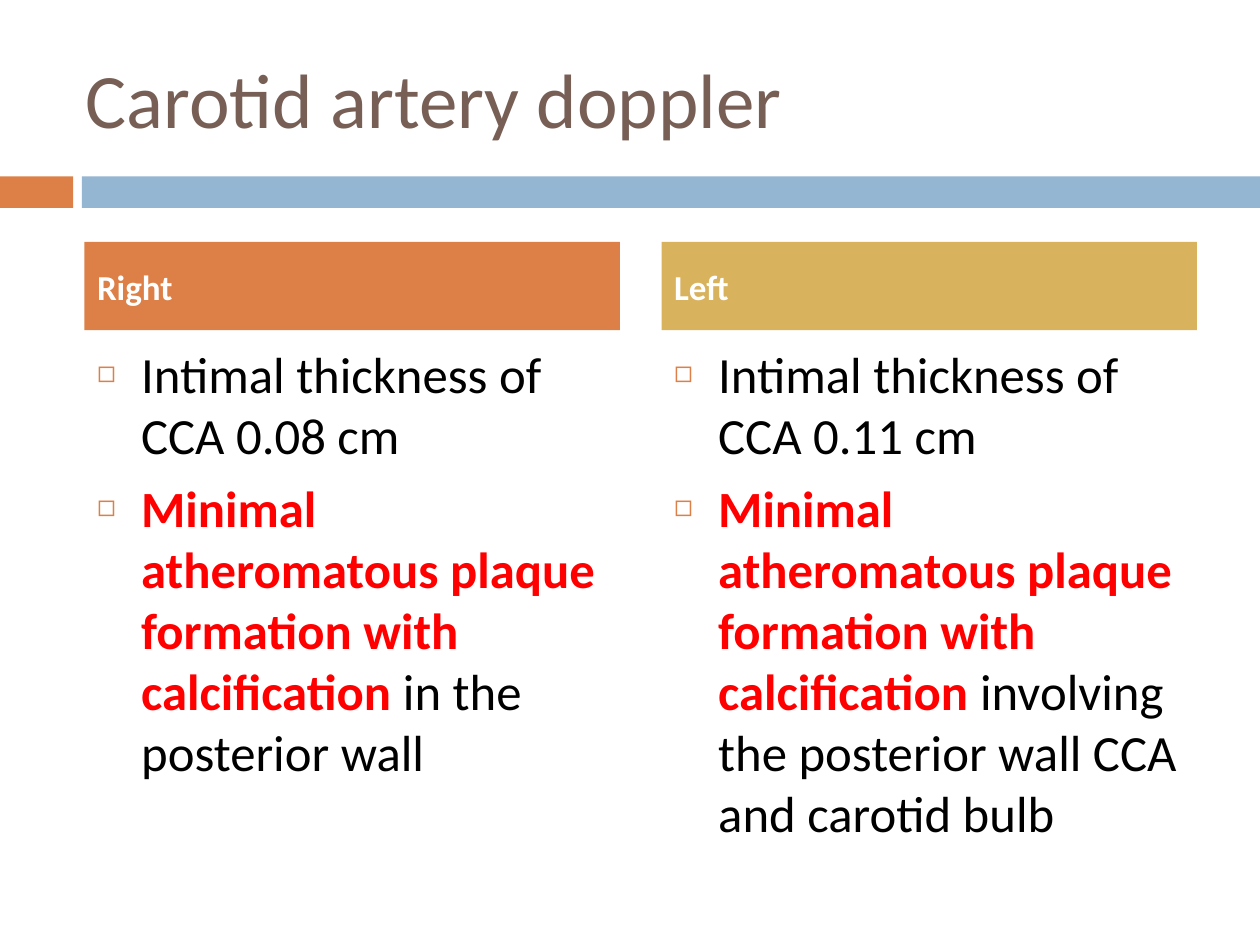
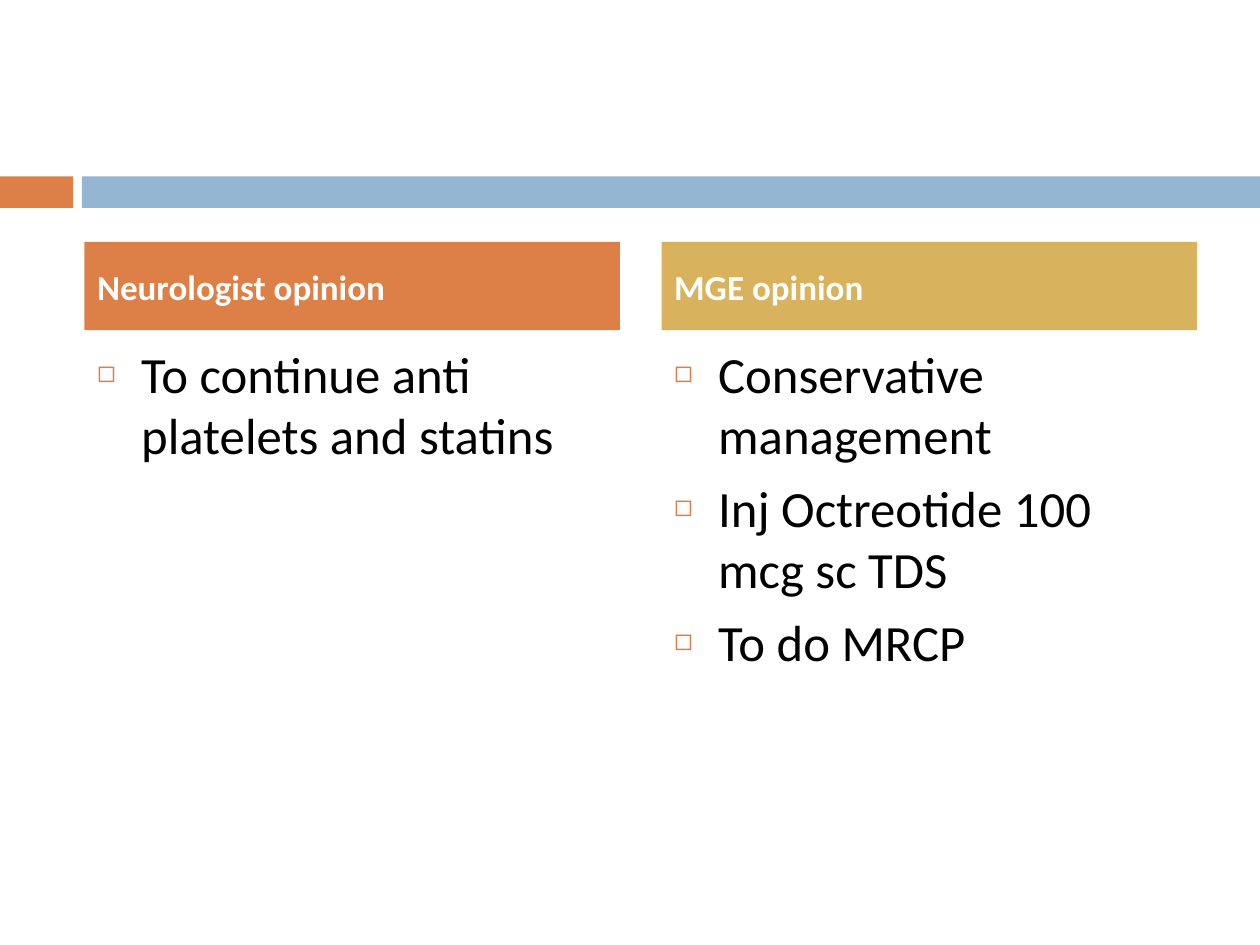
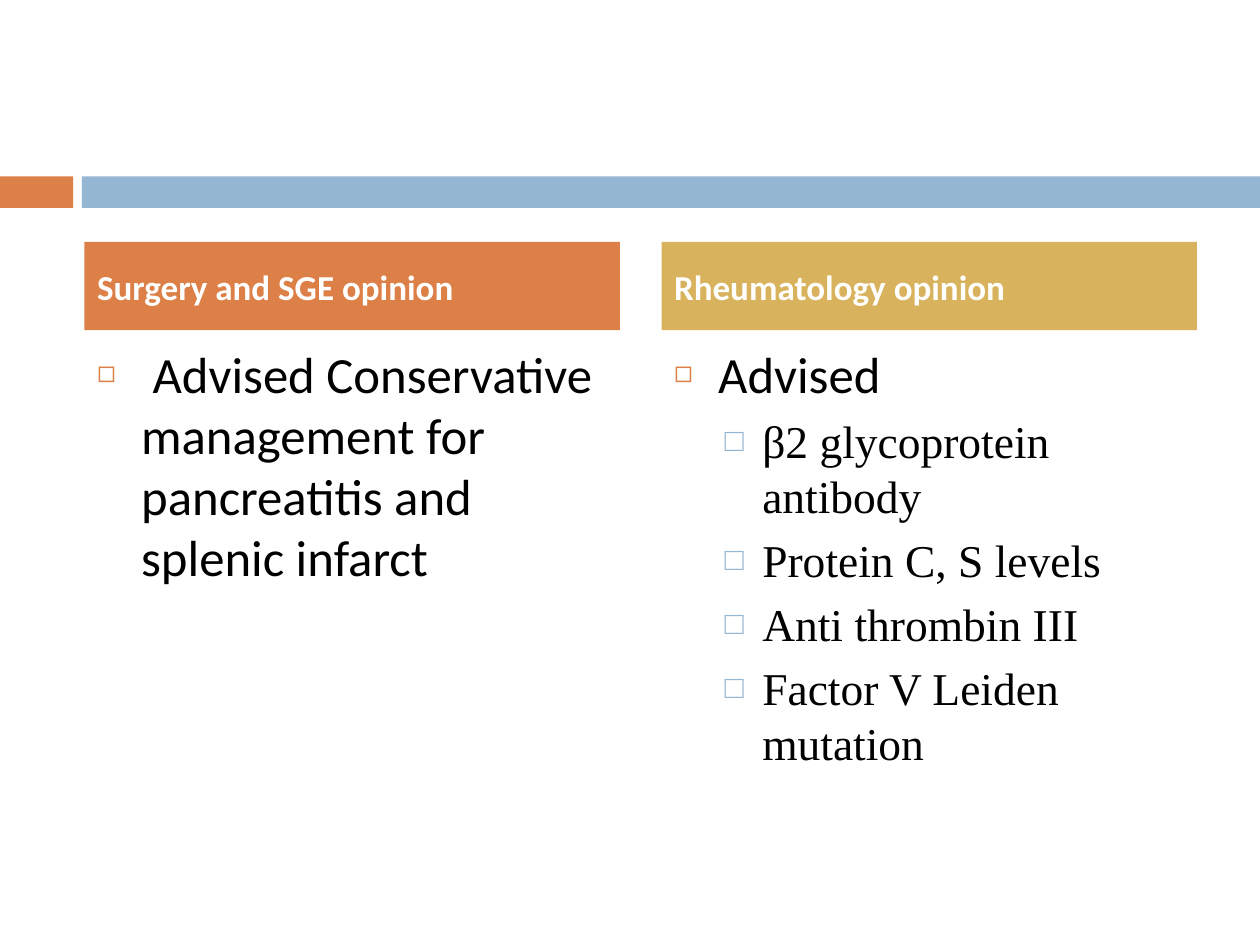
from lxml import etree
from pptx import Presentation
from pptx.dml.color import RGBColor
from pptx.enum import shapes, text
from pptx.oxml import ns
from pptx.util import Inches, Pt

ORANGE = RGBColor(0xDD, 0x80, 0x47)
BLUE = RGBColor(0x94, 0xB6, 0xD2)
GOLD = RGBColor(0xD8, 0xB2, 0x5C)
BROWN = RGBColor(0x77, 0x5F, 0x55)
RED = RGBColor(0xFF, 0x00, 0x00)
BLACK = RGBColor(0x00, 0x00, 0x00)
WHITE = RGBColor(0xFF, 0xFF, 0xFF)

COMPARISON_LAYOUT = 4
COLUMN_LEFTS = (0.67, 5.25)
COLUMN_TOP, COLUMN_WIDTH = 1.92, 4.25
HEADING_HEIGHT, LIST_OFFSET, LIST_HEIGHT = 0.7, 0.75, 3.92

# Per list level: margin, hanging indent, space before, bullet, its colour and
# percentage, text size, font
LEVELS = (
    (0.35, 0.35, 7, "◻", ORANGE, 60, 29, "Calibri"),
    (0.7, 0.3, 5.5, "□", BLUE, 70, 26, "Times New Roman"),
)

PLAQUE = "Minimal atheromatous plaque formation with calcification"

# Each list item is (level, highlighted opening, remaining text)
SLIDES = (
    ("Carotid artery doppler", (
        ("Right", ((0, "", "Intimal thickness of CCA 0.08 cm"),
                   (0, PLAQUE, " in the posterior wall"))),
        ("Left", ((0, "", "Intimal thickness of CCA 0.11 cm"),
                  (0, PLAQUE, " involving the posterior wall CCA and carotid bulb"))),
    )),
    ("", (
        ("Neurologist opinion", ((0, "", "To continue anti platelets and statins"),)),
        ("MGE opinion", ((0, "", "Conservative management"),
                         (0, "", "Inj Octreotide 100 mcg sc TDS"),
                         (0, "", "To do MRCP"))),
    )),
    ("", (
        ("Surgery and SGE opinion",
         ((0, "", " Advised Conservative management for pancreatitis and splenic infarct"),)),
        ("Rheumatology opinion", ((0, "", "Advised"),
                                  (1, "", "β2 glycoprotein antibody"),
                                  (1, "", "Protein C, S levels"),
                                  (1, "", "Anti thrombin III"),
                                  (1, "", "Factor V Leiden mutation"))),
    )),
)


def place(shape, left, top, width, height):
    shape.left, shape.top = Inches(left), Inches(top)
    shape.width, shape.height = Inches(width), Inches(height)


def set_font(paragraph, name, size, color, bold=False):
    font = paragraph.font
    font.name, font.size, font.bold = name, Pt(size), bold
    font.color.rgb = color


def set_bullet(paragraph, char, color, percent):
    properties = paragraph._p.get_or_add_pPr()

    def add(parent, tag, **attributes):
        return etree.SubElement(parent, ns.qn(tag), **attributes)

    add(add(properties, "a:buClr"), "a:srgbClr", val=str(color))
    add(properties, "a:buSzPct", val=str(percent * 1000))
    add(properties, "a:buChar", char=char)


def add_bands(slide, top=1.4, height=0.25):
    for left, width, color in ((0, 0.58, ORANGE), (0.65, 9.35, BLUE)):
        band = slide.shapes.add_shape(
            shapes.MSO_SHAPE.RECTANGLE,
            Inches(left), Inches(top), Inches(width), Inches(height))
        band.shadow.inherit = False
        band.fill.solid()
        band.fill.fore_color.rgb = color
        band.line.fill.background()


def fill_title(title, wording):
    if not wording:
        title._element.getparent().remove(title._element)
        return
    place(title, 0.58, 0.3, 8.92, 0.95)
    frame = title.text_frame
    frame.text = wording
    frame.auto_size = text.MSO_AUTO_SIZE.NONE
    frame.vertical_anchor = text.MSO_ANCHOR.MIDDLE
    paragraph = frame.paragraphs[0]
    paragraph.alignment = text.PP_ALIGN.LEFT
    set_font(paragraph, "Calibri", 44, BROWN)


def fill_heading(heading, wording, color):
    heading.fill.solid()
    heading.fill.fore_color.rgb = color
    frame = heading.text_frame
    frame.text = wording
    frame.auto_size = text.MSO_AUTO_SIZE.NONE
    frame.vertical_anchor = text.MSO_ANCHOR.MIDDLE
    paragraph = frame.paragraphs[0]
    paragraph.space_before = Pt(7)
    set_font(paragraph, "Calibri", 20, WHITE, bold=True)


def fill_list(body, items):
    frame = body.text_frame
    frame.auto_size = text.MSO_AUTO_SIZE.NONE
    for index, (level, highlight, wording) in enumerate(items):
        paragraph = frame.add_paragraph() if index else frame.paragraphs[0]
        margin, hanging, before, char, bullet_color, percent, size, font = LEVELS[level]
        paragraph.level = level
        paragraph.space_before = Pt(before)
        properties = paragraph._p.get_or_add_pPr()
        properties.set("marL", str(Inches(margin)))
        properties.set("indent", str(-Inches(hanging)))
        set_bullet(paragraph, char, bullet_color, percent)
        set_font(paragraph, font, size, BLACK)
        if highlight:
            opening = paragraph.add_run()
            opening.text = highlight
            opening.font.bold = True
            opening.font.color.rgb = RED
        paragraph.add_run().text = wording


def fill_column(heading, body, left, color, wording, items):
    place(heading, left, COLUMN_TOP, COLUMN_WIDTH, HEADING_HEIGHT)
    place(body, left, COLUMN_TOP + LIST_OFFSET, COLUMN_WIDTH, LIST_HEIGHT)
    fill_heading(heading, wording, color)
    fill_list(body, items)


def add_comparison(deck, title, columns):
    slide = deck.slides.add_slide(deck.slide_layouts[COMPARISON_LAYOUT])
    add_bands(slide)
    title_holder, *holders = slide.placeholders
    fill_title(title_holder, title)
    pairs = zip(holders[::2], holders[1::2])
    for (heading, body), left, color, column in zip(
            pairs, COLUMN_LEFTS, (ORANGE, GOLD), columns):
        fill_column(heading, body, left, color, *column)


def main():
    deck = Presentation()
    deck.slide_width, deck.slide_height = Inches(10), Inches(7.5)
    for title, columns in SLIDES:
        add_comparison(deck, title, columns)
    deck.save("out.pptx")


if __name__ == "__main__":
    main()
